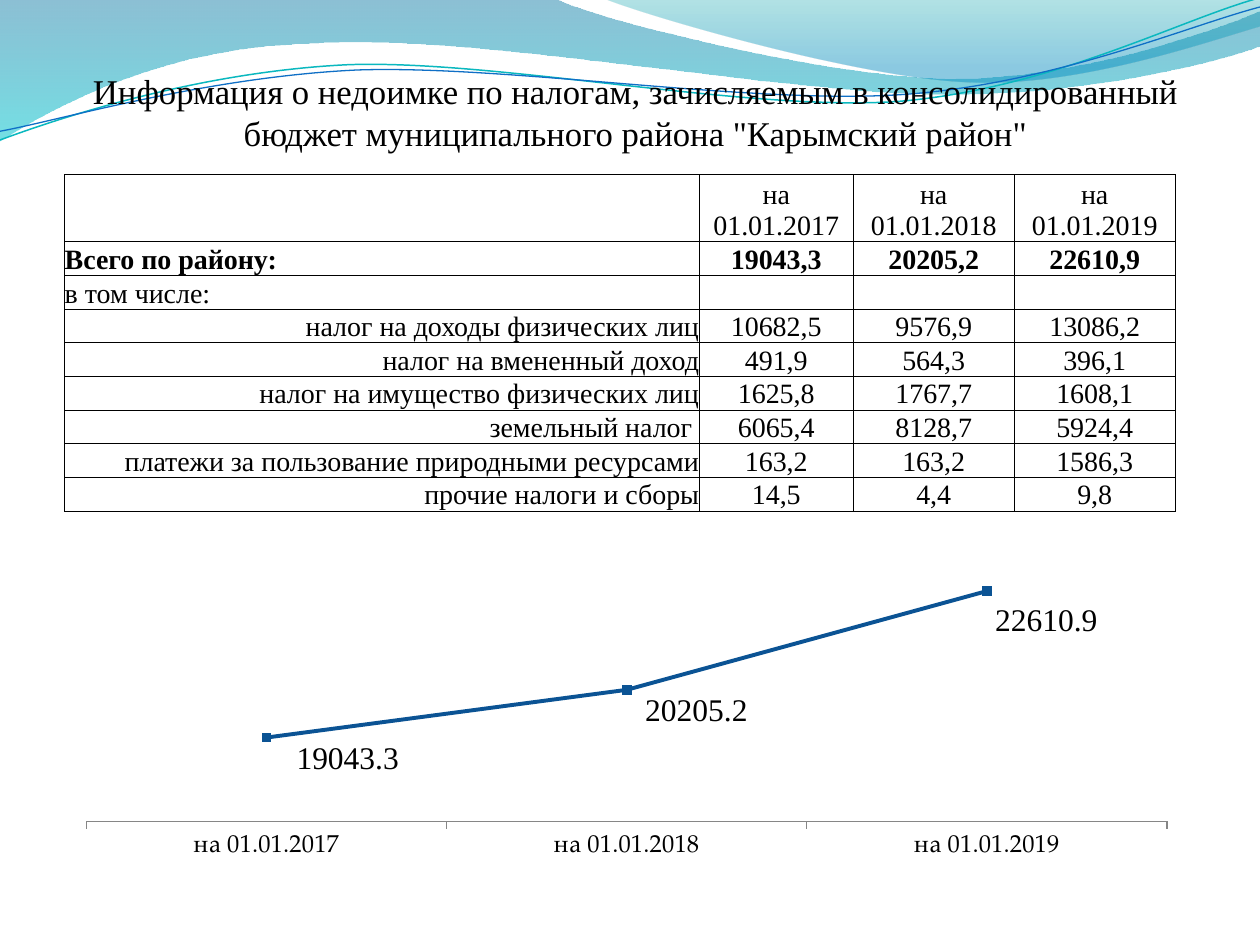
import lxml.etree
import pptx
import pptx.chart.data
import pptx.dml.color
import pptx.enum.chart
import pptx.enum.text
import pptx.oxml
import pptx.oxml.ns
import pptx.util

Pt = pptx.util.Pt
qn = pptx.oxml.ns.qn
ALIGN = pptx.enum.text.PP_ALIGN
ANCHOR = pptx.enum.text.MSO_ANCHOR
SERIF = "Times New Roman"
SERIES_COLOR = "0B5394"

# Outlines in points: a pair is a straight step, six numbers are a cubic curve
BROAD_WAVE = [(0, 0), (317, -0.7), (343, 12, 478, 45, 546, 45),
              (614, 45, 690, 19, 720, 6.5), (721, 26),
              (708, 32, 626, 55, 537, 54), (448, 54, 275, 20, 185, 24.5),
              (93, 26, 33, 60, -1, 81)]
CORNER_WAVE = [(345, -1), (366, 8, 491, 45, 554, 47),
               (616, 50, 692, 23, 720, 15), (720, 0)]
TEAL_LINE = [(0, 80), (35, 67, 114, 41, 199, 37),
             (284, 34, 427, 64, 513, 58), (600, 51, 675, 11, 719, -1)]
BLUE_LINE = [(0, 75), (33, 69, 118, 44, 204, 40),
             (290, 37, 430, 60, 516, 54), (602, 48, 678, 15, 720, 4)]

DATES = ["на 01.01.2017", "на 01.01.2018", "на 01.01.2019"]
TOTALS = [19043.3, 20205.2, 22610.9]
LABEL_OFFSETS = [(0.018, 0.06), (0.008, 0.06), (-0.001, 0.085)]
TABLE_ROWS = [
    ["", DATES[0], "на\n01.01.2018", "на\n01.01.2019"],
    ["Всего по району:", "19043,3", "20205,2", "22610,9"],
    ["в том числе:", "", "", ""],
    ["налог на доходы физических лиц", "10682,5", "9576,9", "13086,2"],
    ["налог на вмененный доход", "491,9", "564,3", "396,1"],
    ["налог на имущество физических лиц", "1625,8", "1767,7", "1608,1"],
    ["земельный налог ", "6065,4", "8128,7", "5924,4"],
    ["платежи за пользование природными ресурсами", "163,2", "163,2", "1586,3"],
    ["прочие налоги и сборы", "14,5", "4,4", "9,8"],
]


def color(value):
    return pptx.dml.color.RGBColor.from_string(value)


def set_font(font, size, name=SERIF, bold=False):
    font.size = Pt(size)
    font.name = name
    font.bold = bold
    font.color.rgb = color("000000")


def set_margins(target, left, top, right, bottom):
    target.margin_left, target.margin_top = Pt(left), Pt(top)
    target.margin_right, target.margin_bottom = Pt(right), Pt(bottom)


def add_outline(slide, steps, close):
    anchors = [(Pt(step[-2]), Pt(step[-1])) for step in steps]
    builder = slide.shapes.build_freeform(*anchors[0])
    builder.add_line_segments(anchors[1:], close=close)
    shape = builder.convert_to_shape()
    shape.shadow.inherit = False
    # Turn the straight segments of curved steps into cubic curves
    segments = list(shape._element.iter(qn("a:lnTo")))
    for step, segment in zip(steps[1:], segments):
        if len(step) == 6:
            curve = lxml.etree.Element(qn("a:cubicBezTo"))
            for x, y in zip(step[::2], step[1::2]):
                lxml.etree.SubElement(curve, qn("a:pt"), x=str(Pt(x) - shape.left),
                                      y=str(Pt(y) - shape.top))
            segment.getparent().replace(segment, curve)
    return shape


def add_wave(slide, steps, stops):
    shape = add_outline(slide, steps, True)
    shape.line.fill.background()
    shape.fill.gradient()
    gradient = shape.fill._xPr.find(qn("a:gradFill"))
    stop_list = gradient.find(qn("a:gsLst"))
    for stop in list(stop_list):
        stop_list.remove(stop)
    for position, value, opacity in stops:
        stop = lxml.etree.SubElement(stop_list, qn("a:gs"), pos=str(position * 1000))
        tint = lxml.etree.SubElement(stop, qn("a:srgbClr"), val=value)
        lxml.etree.SubElement(tint, qn("a:alpha"), val=str(opacity * 1000))
    gradient.find(qn("a:lin")).set("ang", "5400000")


def add_header_waves(slide):
    add_wave(slide, BROAD_WAVE, [(0, "0074A1", 45), (100, "00C6CF", 55)])
    add_wave(slide, CORNER_WAVE, [(0, "00A1A9", 30), (80, "008BBF", 45)])
    for steps, value, width in [(TEAL_LINE, "0AB8BF", 0.85), (BLUE_LINE, "0F6FC6", 0.75)]:
        shape = add_outline(slide, steps, False)
        shape.fill.background()
        shape.line.color.rgb = color(value)
        shape.line.width = Pt(width)


def add_title(slide, left, top, width, height):
    frame = slide.shapes.add_textbox(Pt(left), Pt(top), Pt(width), Pt(height)).text_frame
    frame.word_wrap = True
    frame.vertical_anchor = ANCHOR.BOTTOM
    set_margins(frame, 0, 3.6, 0, 23.2)
    frame.text = ("Информация о недоимке по налогам, зачисляемым в консолидированный "
                  "бюджет муниципального района \"Карымский район\"")
    paragraph = frame.paragraphs[0]
    paragraph.alignment = ALIGN.CENTER
    paragraph.line_spacing = Pt(24)
    set_font(paragraph.runs[0].font, 19.8)


def add_cell_borders(cell):
    properties = cell._tc.get_or_add_tcPr()
    for position, side in enumerate(["a:lnL", "a:lnR", "a:lnT", "a:lnB"]):
        line = lxml.etree.Element(qn(side), w=str(Pt(0.5)))
        fill = lxml.etree.SubElement(line, qn("a:solidFill"))
        lxml.etree.SubElement(fill, qn("a:srgbClr"), val="000000")
        properties.insert(position, line)


def add_arrears_table(slide, left, top, column_widths, row_height, height):
    frame = slide.shapes.add_table(len(TABLE_ROWS), len(column_widths), Pt(left), Pt(top),
                                   Pt(sum(column_widths)), Pt(height))
    table = frame.table
    table.first_row = table.horz_banding = False
    for column, width in zip(table.columns, column_widths):
        column.width = Pt(width)
    for row_index, texts in enumerate(TABLE_ROWS):
        table.rows[row_index].height = Pt(row_height if row_index else 2 * row_height)
        for column_index, text in enumerate(texts):
            cell = table.cell(row_index, column_index)
            cell.text_frame.text = text
            cell.vertical_anchor = ANCHOR.BOTTOM
            set_margins(cell, 0, 0, 0, 0)
            cell.fill.background()
            add_cell_borders(cell)
            first_column = ALIGN.RIGHT if row_index > 2 else ALIGN.LEFT
            for paragraph in cell.text_frame.paragraphs:
                paragraph.alignment = ALIGN.CENTER if column_index else first_column
                for run in paragraph.runs:
                    set_font(run.font, 16, bold=row_index == 1)
                if not paragraph.runs:
                    # Keeps empty cells as low as the filled ones
                    paragraph._p.get_or_add_endParaRPr().set("sz", "1600")
    frame.height = Pt(height)


def add_manual_layout(parent, position, values):
    layout = lxml.etree.Element(qn("c:layout"))
    manual = lxml.etree.SubElement(layout, qn("c:manualLayout"))
    for name, value in values:
        lxml.etree.SubElement(manual, qn("c:" + name), val=str(value))
    parent.insert(position, layout)


def add_totals_chart(slide, left, top, width, height):
    data = pptx.chart.data.CategoryChartData()
    data.categories = DATES
    data.add_series("Series 1", TOTALS)
    chart = slide.shapes.add_chart(pptx.enum.chart.XL_CHART_TYPE.LINE_MARKERS, Pt(left), Pt(top),
                                   Pt(width), Pt(height), data).chart
    chart.has_legend = chart.has_title = False
    set_font(chart.font, 10, "TeX Gyre Pagella")
    plot = chart.plots[0]
    plot.vary_by_categories = False

    # Axes
    chart.value_axis.visible = chart.value_axis.has_major_gridlines = False
    chart.value_axis.minimum_scale, chart.value_axis.maximum_scale = 17000, 23000
    axis = chart.category_axis
    axis.major_tick_mark = pptx.enum.chart.XL_TICK_MARK.OUTSIDE
    axis.format.line.color.rgb = color("868686")
    set_font(axis.tick_labels.font, 14, "TeX Gyre Pagella")

    # Line, markers and labels
    series = plot.series[0]
    series.smooth = False
    series.format.line.color.rgb = color(SERIES_COLOR)
    series.format.line.width = Pt(2.25)
    series.marker.style = pptx.enum.chart.XL_MARKER_STYLE.SQUARE
    series.marker.size = 5
    series.marker.format.fill.solid()
    series.marker.format.fill.fore_color.rgb = color(SERIES_COLOR)
    series.marker.format.line.color.rgb = color(SERIES_COLOR)
    set_font(series.data_labels.font, 18)
    series.data_labels.show_value = True
    labels = series.data_labels._element
    for index, (x, y) in enumerate(LABEL_OFFSETS):
        label = series.points[index].data_label
        set_font(label.font, 18)
        label.position = pptx.enum.chart.XL_LABEL_POSITION.RIGHT
        add_manual_layout(labels.findall(qn("c:dLbl"))[index], 1, [("x", x), ("y", y)])
    # Labels stand free, without leader lines
    for leader in labels.findall(qn("c:showLeaderLines")):
        labels.remove(leader)
    lxml.etree.SubElement(labels, qn("c:showLeaderLines"), val="0")

    # Plot area
    area = chart._chartSpace.find(".//" + qn("c:plotArea"))
    for layout in area.findall(qn("c:layout")):
        area.remove(layout)
    add_manual_layout(area, 0, [("layoutTarget", "inner"), ("xMode", "edge"), ("yMode", "edge"),
                                ("x", 0.02), ("y", 0.04), ("w", 0.94), ("h", 0.69)])


def main():
    presentation = pptx.Presentation()
    presentation.slide_width, presentation.slide_height = Pt(720), Pt(540)
    slide = presentation.slides.add_slide(presentation.slide_layouts[6])
    add_header_waves(slide)
    add_title(slide, 36, 26, 654, 85)
    add_arrears_table(slide, 37, 99.8, [362.6, 88, 92, 92], 14.6, 192)
    add_totals_chart(slide, 36.2, 320.5, 657, 204)
    presentation.save("out.pptx")


if __name__ == "__main__":
    main()
